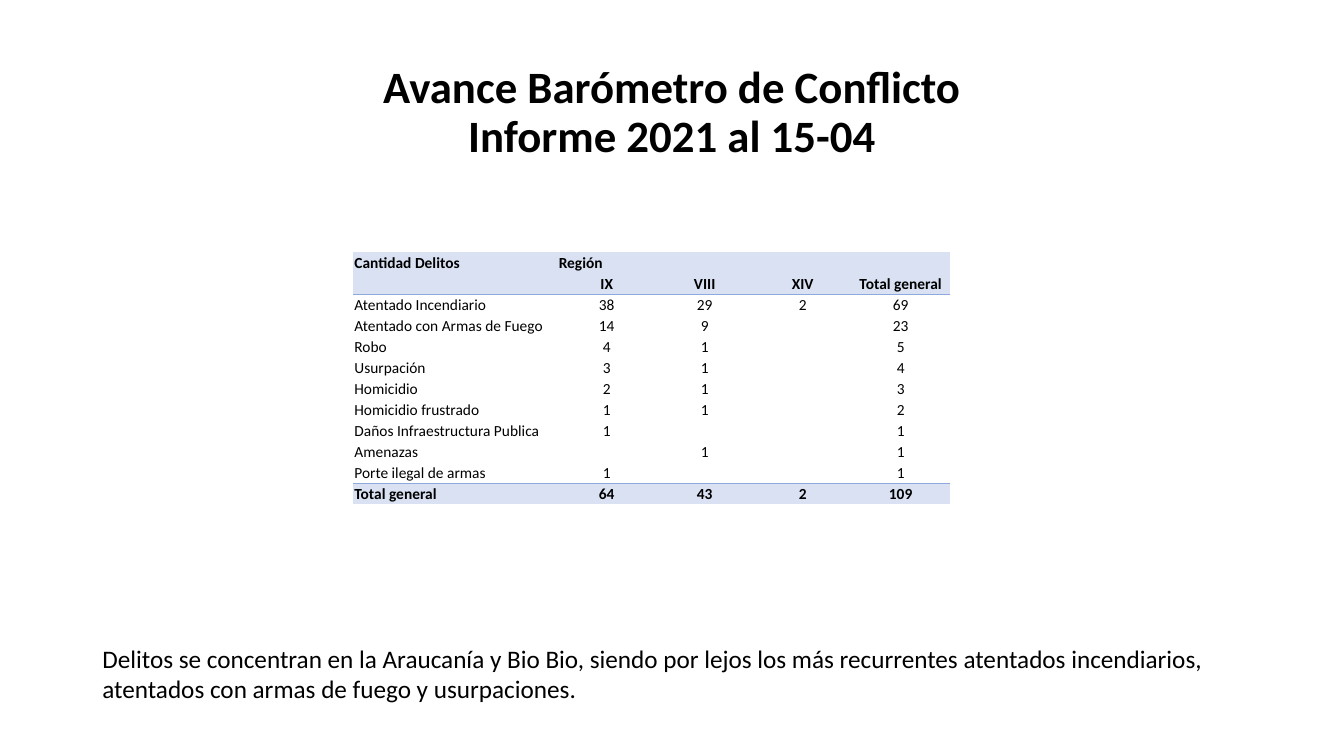
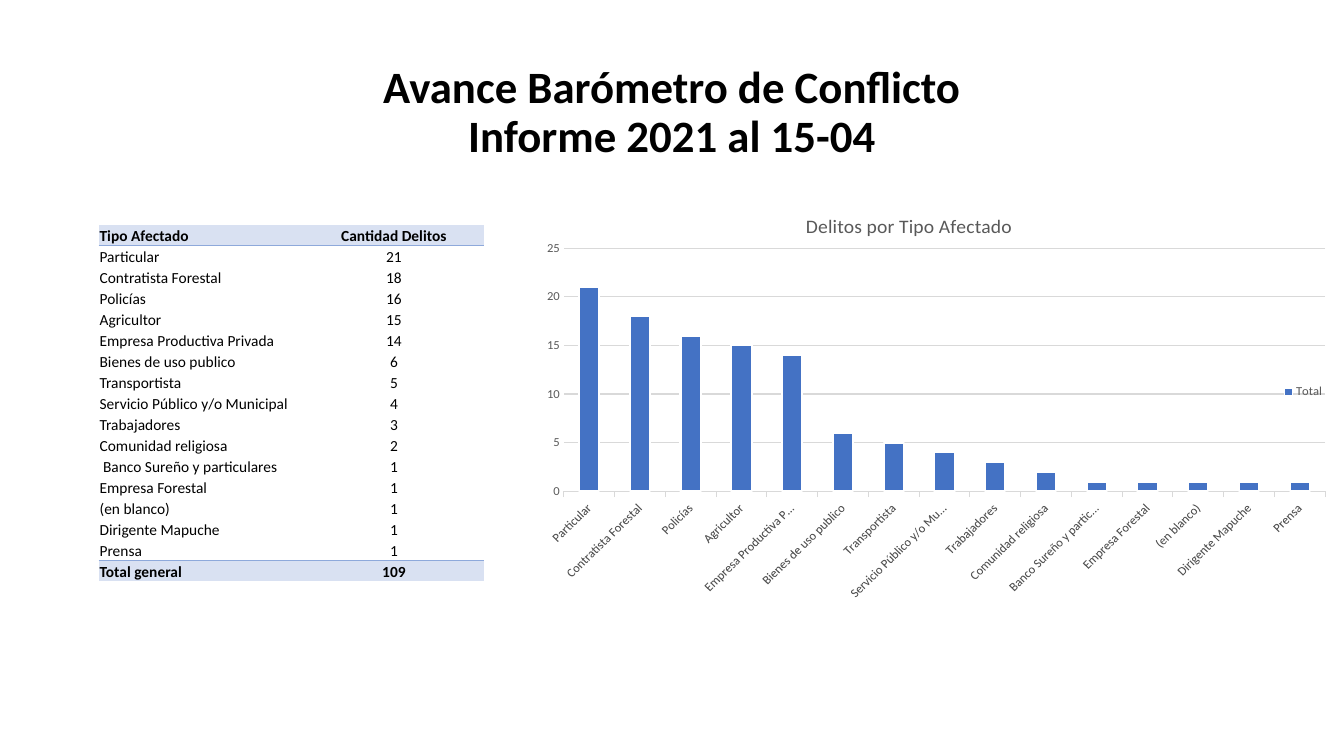
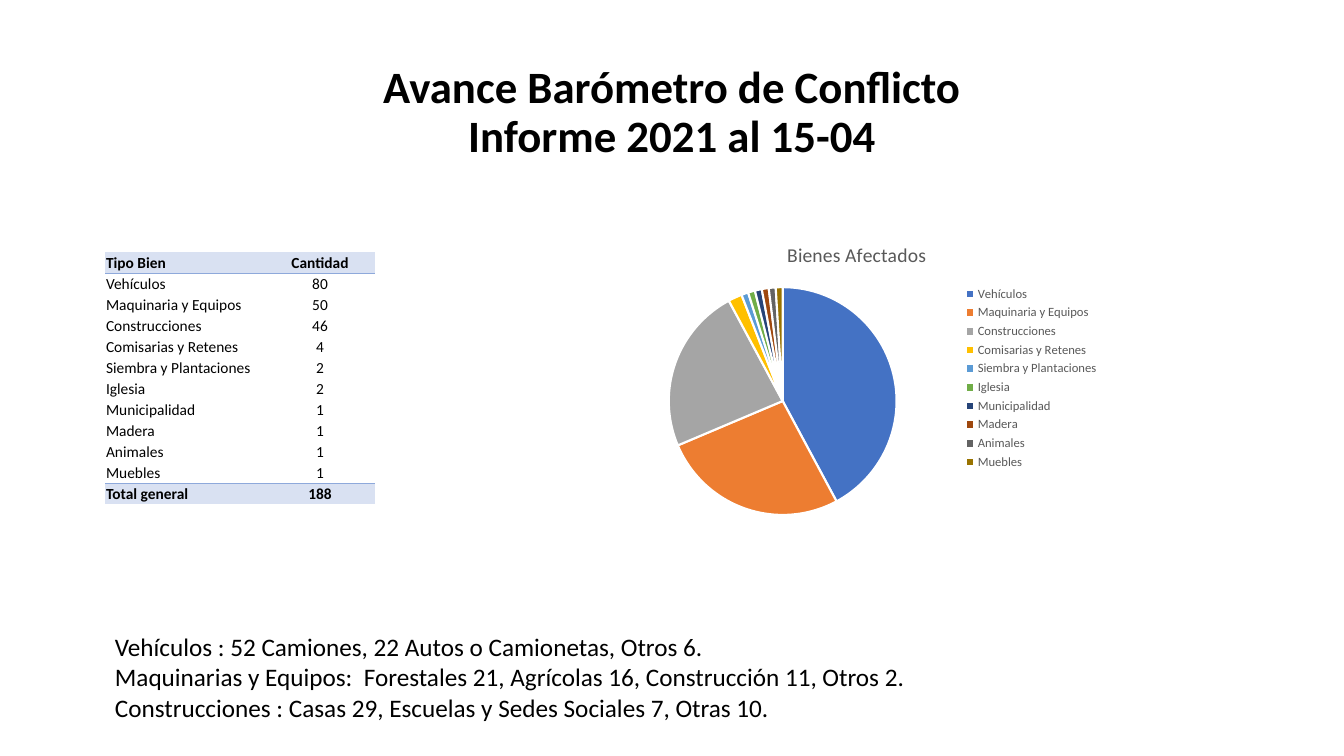
from lxml import etree
from pptx import Presentation
from pptx.chart.data import CategoryChartData
from pptx.dml.color import RGBColor
from pptx.enum.chart import XL_CHART_TYPE, XL_LEGEND_POSITION, XL_TICK_MARK
from pptx.enum.text import MSO_ANCHOR, MSO_AUTO_SIZE, PP_ALIGN
from pptx.oxml.ns import qn
from pptx.util import Pt

COLUMN, PIE = XL_CHART_TYPE.COLUMN_CLUSTERED, XL_CHART_TYPE.PIE
LEGEND_RIGHT = XL_LEGEND_POSITION.RIGHT
TICK_NONE, TICK_OUT = XL_TICK_MARK.NONE, XL_TICK_MARK.OUTSIDE
MIDDLE, BOTTOM = MSO_ANCHOR.MIDDLE, MSO_ANCHOR.BOTTOM
LEFT, CENTER = PP_ALIGN.LEFT, PP_ALIGN.CENTER
GROW = MSO_AUTO_SIZE.SHAPE_TO_FIT_TEXT

FONT = "Calibri"
NO_STYLE = "{2D5ABB26-0587-4C30-8999-92F81FD0307C}"
COLORS = {"text": "000000", "muted": "595959", "grid": "D9D9D9", "white": "FFFFFF",
          "band": "D9E1F2", "rule": "8EA9DB", "bar": "4472C4"}
SLICES = ["4472C4", "ED7D31", "A5A5A5", "FFC000", "5B9BD5",
          "70AD47", "264478", "9E480E", "636363", "997300"]
TITLE = "Avance Barómetro de Conflicto\nInforme 2021 al 15-04"

CRIMES = [
    ["Cantidad Delitos", "Región", "", "", ""],
    ["", "IX", "VIII", "XIV", "Total general"],
    ["Atentado Incendiario", 38, 29, 2, 69],
    ["Atentado con Armas de Fuego", 14, 9, "", 23],
    ["Robo", 4, 1, "", 5],
    ["Usurpación", 3, 1, "", 4],
    ["Homicidio", 2, 1, "", 3],
    ["Homicidio frustrado", 1, 1, "", 2],
    ["Daños Infraestructura Publica", 1, "", "", 1],
    ["Amenazas", "", 1, "", 1],
    ["Porte ilegal de armas", 1, "", "", 1],
    ["Total general", 64, 43, 2, 109],
]
VICTIMS = [
    ["Tipo Afectado", "Cantidad Delitos"],
    ["Particular", 21],
    ["Contratista Forestal", 18],
    ["Policías", 16],
    ["Agricultor", 15],
    ["Empresa Productiva Privada", 14],
    ["Bienes de uso publico", 6],
    ["Transportista", 5],
    ["Servicio Público y/o Municipal", 4],
    ["Trabajadores", 3],
    ["Comunidad religiosa", 2],
    [" Banco Sureño y particulares", 1],
    ["Empresa Forestal", 1],
    ["(en blanco)", 1],
    ["Dirigente Mapuche", 1],
    ["Prensa", 1],
    ["Total general", 109],
]
GOODS = [
    ["Tipo Bien", "Cantidad"],
    ["Vehículos", 80],
    ["Maquinaria y Equipos", 50],
    ["Construcciones", 46],
    ["Comisarias y Retenes", 4],
    ["Siembra y Plantaciones", 2],
    ["Iglesia", 2],
    ["Municipalidad", 1],
    ["Madera", 1],
    ["Animales", 1],
    ["Muebles", 1],
    ["Total general", 188],
]


def rgb(name):
    """Return the RGB value of a named colour or a hex string."""
    return RGBColor.from_string(COLORS.get(name, name))


def style(font, size, color="text", bold=False):
    """Format a font."""
    font.name, font.size, font.bold = FONT, Pt(size), bold
    font.color.rgb = rgb(color)


def put(tf, *texts, size=18, color="text", bold=False, align=LEFT, spacing=None):
    """Write one formatted paragraph for each text."""
    for i, text in enumerate(texts):
        p = tf.add_paragraph() if i else tf.paragraphs[0]
        p.text, p.alignment, p.line_spacing = text, align, spacing
        for r in p.runs:
            style(r.font, size, color, bold)
        marks = [etree.SubElement(br, qn("a:rPr")) for br in p._p.findall(qn("a:br"))]
        marks.append(etree.SubElement(p._p, qn("a:endParaRPr")))
        for mark in marks:
            mark.set("sz", str(size * 100))


def draw_line(line, color, width):
    """Format a solid line."""
    line.color.rgb, line.width = rgb(color), Pt(width)


class Deck:
    """Holds the presentation, its style and the current slide."""

    def __init__(self):
        """Start a widescreen presentation."""
        self.prs = Presentation()
        self.prs.slide_width, self.prs.slide_height = Pt(960), Pt(540)
        self.slide = None

    def add_slide(self):
        """Add a slide with the shared title."""
        self.slide = self.prs.slides.add_slide(self.prs.slide_layouts[5])
        sp = self.slide.shapes.title
        sp.left, sp.top, sp.width, sp.height = Pt(66), Pt(28.75), Pt(828), Pt(104.4)
        sp.text_frame.vertical_anchor = MIDDLE
        put(sp.text_frame, TITLE, size=32, bold=True, align=CENTER, spacing=0.9)

    def add_note(self, x, y, w, h, *lines):
        """Add a text box that grows with its lines."""
        tf = self.slide.shapes.add_textbox(Pt(x), Pt(y), Pt(w), Pt(h)).text_frame
        tf.word_wrap, tf.auto_size = False, GROW
        put(tf, *lines)

    def add_table(self, x, y, widths, rows, heads=1):
        """Add a table with banded heading and total rows."""
        row_h, last = 15, len(rows) - 1
        sp = self.slide.shapes.add_table(len(rows), len(widths), Pt(x), Pt(y),
                                         Pt(sum(widths)), Pt(row_h * len(rows)))
        table = sp.table
        table.first_row = table.horz_banding = False
        table._tbl.tblPr.find(qn("a:tableStyleId")).text = NO_STYLE
        for column, width in zip(table.columns, widths):
            column.width = Pt(width)
        for i, row in enumerate(rows):
            table.rows[i].height = Pt(row_h)
            banded = i < heads or i == last
            sides = {"a:lnL": False, "a:lnR": False,
                     "a:lnT": i in (heads, last), "a:lnB": i in (heads - 1, last - 1)}
            for j, value in enumerate(row):
                cell = table.cell(i, j)
                cell.margin_left = cell.margin_right = cell.margin_top = Pt(0.75)
                cell.margin_bottom = 0
                cell.vertical_anchor = BOTTOM
                centred = j > 0 and i >= heads - 1
                put(cell.text_frame, str(value), size=11, bold=banded,
                    align=CENTER if centred else LEFT)
                for side, shown in sides.items():
                    self.add_border(cell, side, shown)
                if banded:
                    cell.fill.solid()
                    cell.fill.fore_color.rgb = rgb("band")
                else:
                    cell.fill.background()

    def add_border(self, cell, side, shown):
        """Draw a thin rule on a side of a cell, or clear it."""
        ln = etree.SubElement(cell._tc.get_or_add_tcPr(), qn(side))
        if shown:
            ln.set("w", str(Pt(0.5)))
            fill = etree.SubElement(ln, qn("a:solidFill"))
            etree.SubElement(fill, qn("a:srgbClr"), val=COLORS["rule"])
        else:
            etree.SubElement(ln, qn("a:noFill"))

    def add_chart(self, kind, x, y, w, h, title, series, points, plot_box):
        """Add a one-series chart with a title and a legend."""
        data = CategoryChartData()
        data.categories = [name for name, _ in points]
        data.add_series(series, [value for _, value in points])
        chart = self.slide.shapes.add_chart(kind, Pt(x), Pt(y), Pt(w), Pt(h), data).chart
        style(chart.font, 10)
        put(chart.chart_title.text_frame, title, size=14, color="muted", align=CENTER)
        chart.chart_title.include_in_layout = False
        chart.has_legend = True
        chart.legend.position = LEGEND_RIGHT
        chart.legend.include_in_layout = False
        style(chart.legend.font, 9, "muted")
        self.place_plot(chart, plot_box)
        chart.plots[0].vary_by_categories = kind == PIE
        return chart

    def place_plot(self, chart, box):
        """Fix the inner plot area as fractions of the chart."""
        area = chart._chartSpace.find(".//" + qn("c:plotArea"))
        for old in area.findall(qn("c:layout")):
            area.remove(old)
        layout = etree.SubElement(area, qn("c:layout"))
        area.insert(0, layout)
        manual = etree.SubElement(layout, qn("c:manualLayout"))
        settings = [("layoutTarget", "inner"), ("xMode", "edge"), ("yMode", "edge")]
        for tag, value in settings + list(zip("xywh", box)):
            etree.SubElement(manual, qn("c:" + tag), val=str(value))

    def add_columns(self, *args):
        """Add a column chart with slanted category labels."""
        chart = self.add_chart(COLUMN, *args)
        plot = chart.plots[0]
        plot.gap_width = 150
        self.paint(plot.series[0].format, "bar")
        cat, val = chart.category_axis, chart.value_axis
        for axis in (cat, val):
            style(axis.tick_labels.font, 9, "muted")
        cat.major_tick_mark, val.major_tick_mark = TICK_OUT, TICK_NONE
        draw_line(cat.format.line, "grid", 0.75)
        cat._element.find(qn("c:txPr")).find(qn("a:bodyPr")).set("rot", "-2700000")
        val.minimum_scale, val.maximum_scale, val.major_unit = 0, 25, 5
        val.format.line.fill.background()
        draw_line(val.major_gridlines.format.line, "grid", 0.75)

    def add_pie(self, *args):
        """Add a pie chart with one colour for each slice."""
        series = self.add_chart(PIE, *args).plots[0].series[0]
        for i, color in enumerate(SLICES):
            self.paint(series.points[i].format, color)

    def paint(self, fmt, color):
        """Fill a chart mark and outline it in white."""
        fmt.fill.solid()
        fmt.fill.fore_color.rgb = rgb(color)
        draw_line(fmt.line, "white", 1.5)


def main():
    """Build and save the three slides."""
    deck = Deck()

    deck.add_slide()
    deck.add_note(66, 455.75, 810, 51,
                  "Delitos se concentran en la Araucanía y Bio Bio, siendo por lejos "
                  "los más recurrentes atentados incendiarios,",
                  "atentados con armas de fuego y usurpaciones.")
    deck.add_table(252.4, 180, [146] + [70] * 4, CRIMES, heads=2)

    deck.add_slide()
    deck.add_table(70.4, 160.4, [147, 128], VICTIMS)
    deck.add_columns(345.6, 140, 607.7, 288.7, "Delitos por Tipo Afectado", "Total",
                     VICTIMS[1:-1], (0.094, 0.133, 0.895, 0.621))

    deck.add_slide()
    deck.add_table(75, 180, [114, 79.2], GOODS)
    total = GOODS[-1][1]
    shares = [(name, round(100 * count / total)) for name, count in GOODS[1:-1]]
    deck.add_pie(432, 162, 360, 216, "Bienes Afectados", "Series 1", shares,
                 (0.127, 0.199, 0.452, 0.755))
    deck.add_note(75, 447.5, 584.6, 72.7,
                  "Vehículos : 52 Camiones, 22 Autos o Camionetas, Otros 6.",
                  "Maquinarias y Equipos:  Forestales 21, Agrícolas 16, Construcción 11, Otros 2.",
                  "Construcciones : Casas 29, Escuelas y Sedes Sociales 7, Otras 10.")

    deck.prs.save("out.pptx")


if __name__ == "__main__":
    main()
